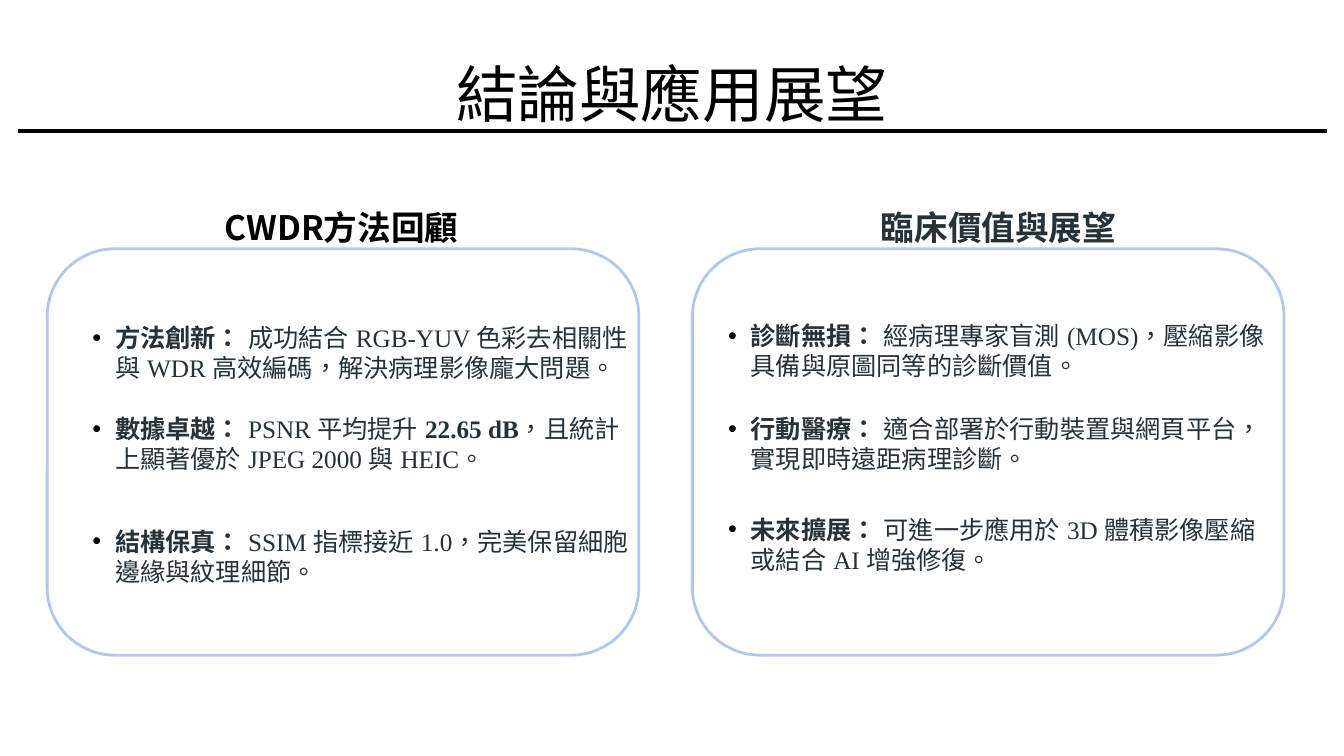
from lxml import etree
from pptx import Presentation
from pptx.dml.color import RGBColor
from pptx.enum.shapes import MSO_CONNECTOR, MSO_SHAPE
from pptx.enum.text import MSO_ANCHOR, MSO_AUTO_SIZE, PP_ALIGN
from pptx.oxml.ns import qn
from pptx.util import Cm, Pt

LINE, ROUNDED = MSO_CONNECTOR.STRAIGHT, MSO_SHAPE.ROUNDED_RECTANGLE
TOP, MIDDLE, BOTTOM = MSO_ANCHOR.TOP, MSO_ANCHOR.MIDDLE, MSO_ANCHOR.BOTTOM
CENTER, LEFT = PP_ALIGN.CENTER, PP_ALIGN.LEFT
NO_FIT = MSO_AUTO_SIZE.NONE

BLACK = RGBColor(0x00, 0x00, 0x00)
SLATE = RGBColor(0x26, 0x32, 0x38)
PALE_BLUE = RGBColor(0xB4, 0xC7, 0xE7)
TITLE_FONT, HEAD_FONT, BODY_FONT = "Arial", "Noto Sans CJK SC", "Times New Roman"
# East Asian companion of each Latin font, so that Chinese text is sans serif
ASIAN_FONT = {TITLE_FONT: "Arial", HEAD_FONT: HEAD_FONT, BODY_FONT: "Arial"}

# Content: each point is (top in cm, [(text, bold), ...])
TITLE = "結論與應用展望"
PANELS = [
    {
        "left": 1.19, "heading": "CWDR方法回顧", "color": BLACK,
        "head_left": 5.41, "head_width": 8.48,
        "text_left": 2.08, "text_width": 14.03,
        "points": [
            (8.0, [("方法創新：", True),
                   (" 成功結合 RGB-YUV 色彩去相關性與 WDR 高效編碼，解決病理影像龐大問題。", False)]),
            (10.29, [("數據卓越： ", True), ("PSNR 平均提升 ", False), ("22.65 dB", True),
                     ("，且統計上顯著優於 JPEG 2000 與 HEIC。", False)]),
            (13.13, [("結構保真： ", True),
                     ("SSIM 指標接近 1.0，完美保留細胞邊緣與紋理細節。", False)]),
        ],
    },
    {
        "left": 17.45, "heading": "臨床價值與展望", "color": SLATE,
        "head_left": 21.95, "head_width": 6.65,
        "text_left": 18.1, "text_width": 14.35,
        "points": [
            (7.95, [("診斷無損：", True),
                    (" 經病理專家盲測 (MOS)，壓縮影像具備與原圖同等的診斷價值。", False)]),
            (10.29, [("行動醫療：", True),
                     (" 適合部署於行動裝置與網頁平台，實現即時遠距病理診斷。", False)]),
            (12.83, [("未來擴展：", True),
                     (" 可進一步應用於 3D 體積影像壓縮或結合 AI 增強修復。", False)]),
        ],
    },
]
PANEL_TOP, PANEL_W, PANEL_H = 6.27, 14.91, 10.24
HEAD_TOP, HEAD_H, POINT_H = 5.08, 1.27, 1.8
HANG = Cm(0.57)


def style_run(r, font, size, color, bold):
    r.font.name, r.font.size, r.font.bold = font, Pt(size), bold
    r.font.color.rgb = color
    rPr = r.font._element
    rPr.set("lang", "zh-TW")
    ea = etree.Element(qn("a:ea"), typeface=ASIAN_FONT[font])
    rPr.find(qn("a:latin")).addnext(ea)


def add_bullet(p):
    pPr = p._p.get_or_add_pPr()
    pPr.set("marL", str(HANG))
    pPr.set("indent", str(-HANG))
    pPr.set("hangingPunct", "0")  # keeps closing marks inside the panel
    color = etree.SubElement(pPr, qn("a:buClr"))
    etree.SubElement(color, qn("a:srgbClr"), val=str(BLACK))
    etree.SubElement(pPr, qn("a:buFont"), typeface=TITLE_FONT)
    etree.SubElement(pPr, qn("a:buChar"), char="•")


def add_text(left, top, width, height, runs, font, size, color, anchor=TOP, bullet=False):
    tf = s.shapes.add_textbox(Cm(left), Cm(top), Cm(width), Cm(height)).text_frame
    tf.word_wrap, tf.vertical_anchor = True, anchor
    p = tf.paragraphs[0]
    p.alignment = LEFT
    if bullet:
        add_bullet(p)
    for text, bold in runs:
        r = p.add_run()
        r.text = text
        style_run(r, font, size, color, bold)


prs = Presentation()
prs.slide_width, prs.slide_height = Cm(33.87), Cm(19.05)
s = prs.slides.add_slide(prs.slide_layouts[5])

# Title and rule
title = s.shapes.title
title.left, title.top, title.width, title.height = 0, Cm(1.27), prs.slide_width, Cm(2.13)
tf = title.text_frame
tf.text = TITLE
tf.word_wrap, tf.auto_size, tf.vertical_anchor = True, NO_FIT, BOTTOM
tf.paragraphs[0].alignment = CENTER
style_run(tf.paragraphs[0].runs[0], TITLE_FONT, 44, BLACK, False)

rule = s.shapes.add_connector(LINE, Cm(0.46), Cm(3.3), Cm(33.45), Cm(3.3))
rule.line.color.rgb, rule.line.width = BLACK, Pt(3)
etree.SubElement(rule._element.spPr, qn("a:effectLst"))

# Two panels, each with a heading and bullet points
for panel in PANELS:
    sp = s.shapes.add_shape(ROUNDED, Cm(panel["left"]), Cm(PANEL_TOP), Cm(PANEL_W), Cm(PANEL_H))
    sp.shadow.inherit = False
    sp.fill.background()
    sp.line.color.rgb, sp.line.width = PALE_BLUE, Pt(2)
    add_text(panel["head_left"], HEAD_TOP, panel["head_width"], HEAD_H,
             [(panel["heading"], True)], HEAD_FONT, 24, panel["color"], MIDDLE)
    for top, runs in panel["points"]:
        add_text(panel["text_left"], top, panel["text_width"], POINT_H,
                 runs, BODY_FONT, 18, SLATE, bullet=True)

prs.save("out.pptx")
